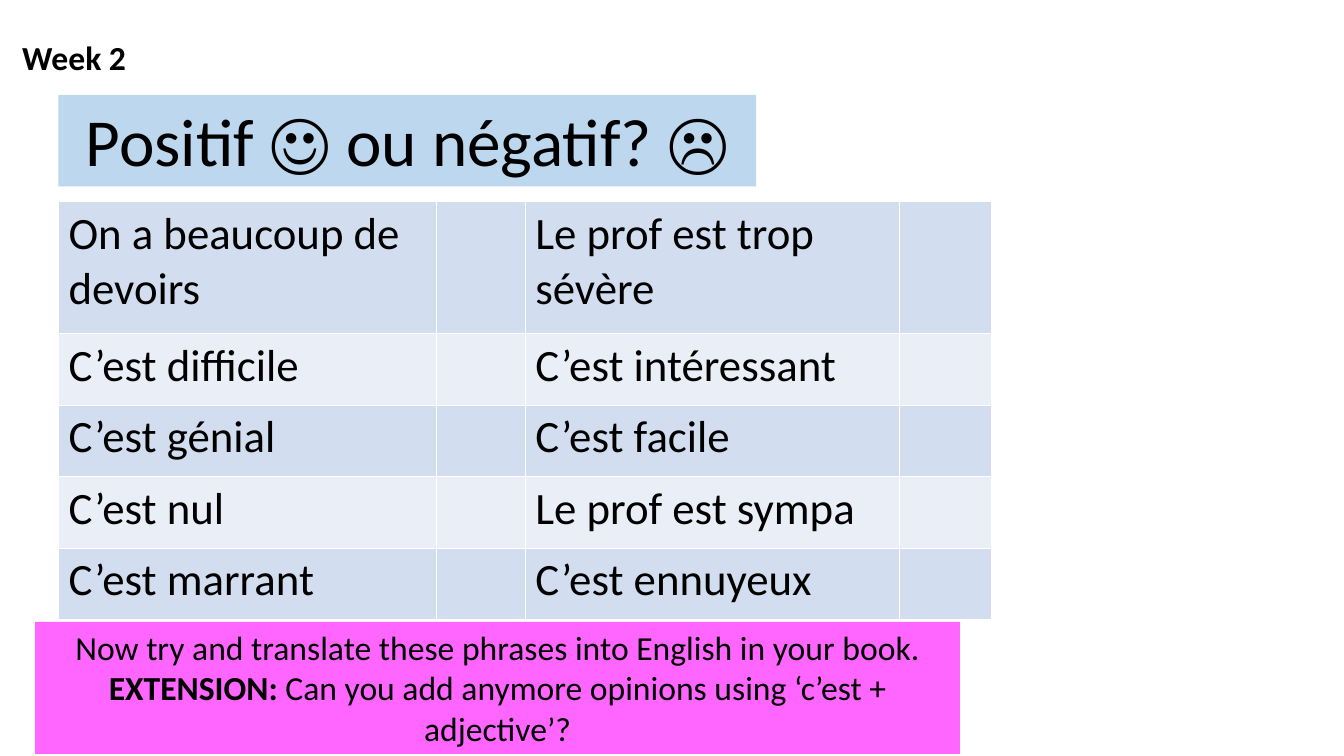
"""Build a French opinions slide with a phrase table and a translation task."""
from dataclasses import dataclass

from lxml.etree import SubElement as Sub
from pptx import Presentation
from pptx.dml.color import RGBColor as RGB
from pptx.enum.shapes import MSO_SHAPE as SHAPE
from pptx.enum.text import MSO_ANCHOR as ANCHOR, PP_ALIGN as ALIGN
from pptx.oxml.ns import qn
from pptx.util import Pt

WEEK = "Week 2"
HEAD = [[("Positif ☺ ou négatif? ☹", False)]]
TASK = [
    [("Now try and translate these phrases into English in your book.", False)],
    [("EXTENSION: ", True),
     ("Can you add anymore opinions using ‘c’est + adjective’?", False)],
]
PAIRS = [
    ("On a beaucoup de devoirs", "Le prof est trop sévère"),
    ("C’est difficile", "C’est intéressant"),
    ("C’est génial", "C’est facile"),
    ("C’est nul", "Le prof est sympa"),
    ("C’est marrant", "C’est ennuyeux"),
]
SIZE = (1333, 750)
WEEK_BOX = (12, 25, 220, 69)
HEAD_BOX = (58, 94, 692, 91)
TASK_BOX = (35, 617, 917, 131)
GRID_AT = (58, 200)
COLS = (375, 88, 371, 92)
ROWS = (131,) + (71,) * (len(PAIRS) - 1)
SCALE = 9144


@dataclass(frozen=True)
class Theme:
    font: str = "Calibri"
    ink: str = "000000"
    head: str = "BDD7EE"
    task: str = "FF66FF"
    bands: tuple = ("D2DEEF", "EAEFF7")
    rule: str = "FFFFFF"
    big: int = 48
    cell: int = 32
    body: int = 24


LOOK = Theme()


def emu(*px):
    return [n * SCALE for n in px]


def paint(item, color):
    item.fill.solid()
    item.fill.fore_color.rgb = RGB.from_string(color)


def style(para, size, bold=None):
    font = para.font
    font.name, font.size, font.bold = LOOK.font, Pt(size), bold
    font.color.rgb = RGB.from_string(LOOK.ink)


def add_panel(slide, box, color, lines, size):
    panel = slide.shapes.add_shape(SHAPE.RECTANGLE, *emu(*box))
    panel.shadow.inherit = False
    panel.line.fill.background()
    paint(panel, color)
    frame = panel.text_frame
    frame.word_wrap = True
    frame.vertical_anchor = ANCHOR.TOP
    for i, runs in enumerate(lines):
        para = frame.add_paragraph() if i else frame.paragraphs[0]
        para.alignment = ALIGN.CENTER
        style(para, size)
        for text, bold in runs:
            run = para.add_run()
            run.text = text
            if bold:
                run.font.bold = True


def add_rules(cell):
    props = cell._tc.get_or_add_tcPr()
    for side in "LRTB":
        line = Sub(props, qn(f"a:ln{side}"), w=str(Pt(1)))
        Sub(Sub(line, qn("a:solidFill")), qn("a:srgbClr"), val=LOOK.rule)


def add_grid(slide):
    box = emu(*GRID_AT, sum(COLS), sum(ROWS))
    grid = slide.shapes.add_table(len(ROWS), len(COLS), *box).table
    grid.first_row = False
    for col, wide in zip(grid.columns, COLS):
        col.width = wide * SCALE
    for r, (left, right) in enumerate(PAIRS):
        grid.rows[r].height = ROWS[r] * SCALE
        for c, text in enumerate((left, "", right, "")):
            cell = grid.cell(r, c)
            add_rules(cell)
            paint(cell, LOOK.bands[r % 2])
            cell.text = text
            style(cell.text_frame.paragraphs[0], LOOK.cell)


def add_week(slide):
    title = slide.shapes.title
    title.left, title.top, title.width, title.height = emu(*WEEK_BOX)
    frame = title.text_frame
    frame.text = WEEK
    frame.vertical_anchor = ANCHOR.MIDDLE
    para = frame.paragraphs[0]
    para.alignment = ALIGN.LEFT
    para.line_spacing = 0.9
    style(para, LOOK.body, True)


def main():
    deck = Presentation()
    deck.slide_width, deck.slide_height = emu(*SIZE)
    slide = deck.slides.add_slide(deck.slide_layouts[5])
    add_panel(slide, HEAD_BOX, LOOK.head, HEAD, LOOK.big)
    add_grid(slide)
    add_week(slide)
    add_panel(slide, TASK_BOX, LOOK.task, TASK, LOOK.body)
    deck.save("out.pptx")


if __name__ == "__main__":
    main()
